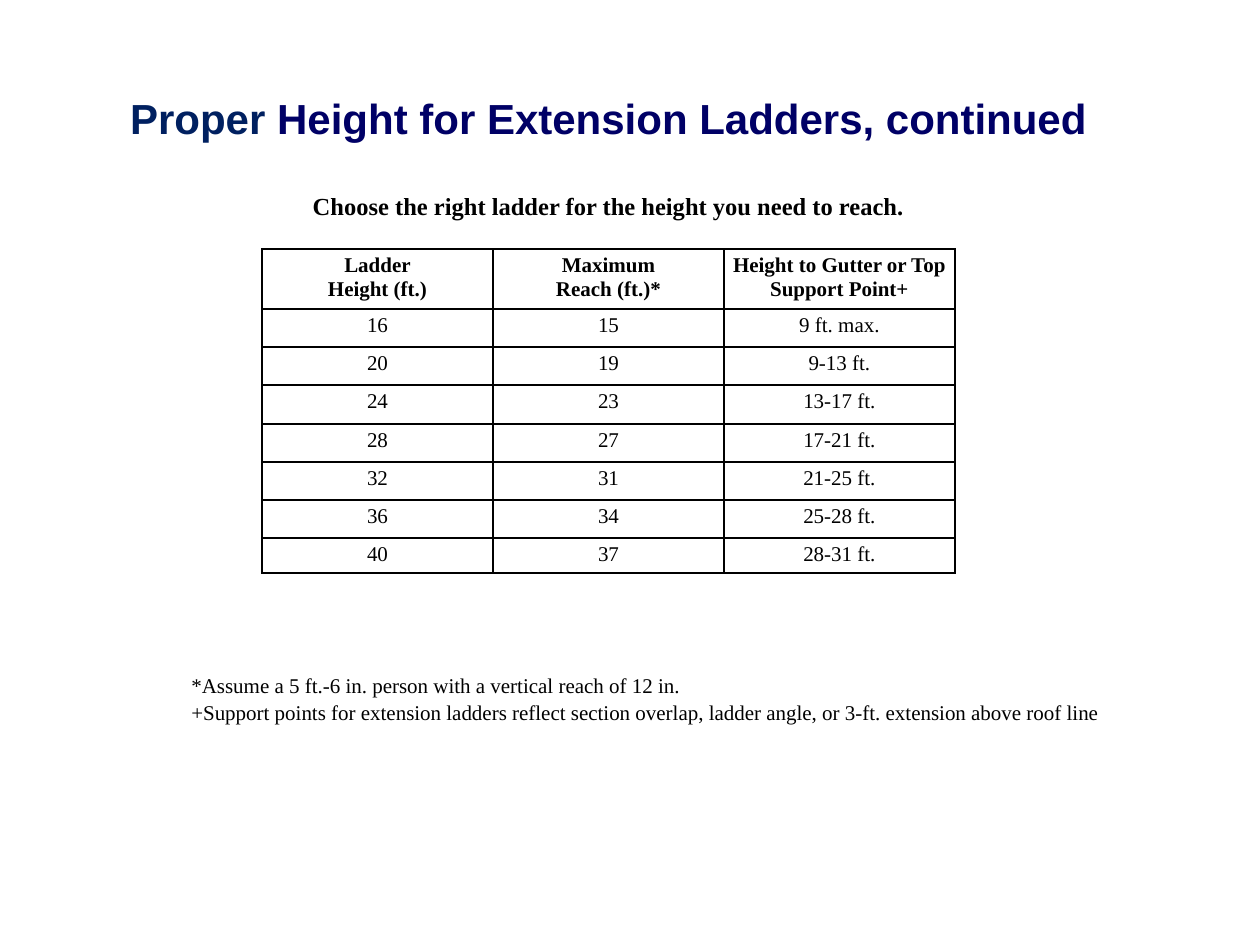
from lxml.etree import SubElement
from pptx import Presentation
from pptx.dml.color import RGBColor
from pptx.enum.text import MSO_ANCHOR, MSO_AUTO_SIZE, PP_ALIGN
from pptx.oxml.ns import qn
from pptx.util import Emu, Pt

PX_PER_INCH = 126
SERIF = "Times New Roman"
BLACK = "000000"

ROW_HEIGHTS = [60, 38, 38, 39, 38, 38, 38, 35]
COLUMN_WIDTH = 231
LADDERS = [
    ("Ladder\nHeight (ft.)", "Maximum\nReach (ft.)*",
     "Height to Gutter or Top Support Point+"),
    ("16", "15", "9 ft. max."),
    ("20", "19", "9-13 ft."),
    ("24", "23", "13-17 ft."),
    ("28", "27", "17-21 ft."),
    ("32", "31", "21-25 ft."),
    ("36", "34", "25-28 ft."),
    ("40", "37", "28-31 ft."),
]
NOTES = [
    "*Assume a 5 ft.-6 in. person with a vertical reach of 12 in.",
    "+Support points for extension ladders reflect section overlap, "
    "ladder angle, or 3-ft. extension above roof line",
]


def px(n):
    return Emu(round(n * 914400 / PX_PER_INCH))


def set_font(font, color, size, name=SERIF, bold=False):
    font.name, font.size, font.bold = name, Pt(size), bold
    font.color.rgb = RGBColor.from_string(color)


def place(sp, x, y, w, h):
    sp.left, sp.top, sp.width, sp.height = px(x), px(y), px(w), px(h)
    tf = sp.text_frame
    tf.word_wrap = True
    tf.auto_size = MSO_AUTO_SIZE.NONE
    return tf


def add_heading(sp, box, parts, size, name):
    """Fill a placeholder with one bold centred line of (text, colour) parts."""
    tf = place(sp, *box)
    tf.vertical_anchor = MSO_ANCHOR.MIDDLE
    p = tf.paragraphs[0]
    p.alignment, p.space_before = PP_ALIGN.CENTER, Pt(0)
    for text, color in parts:
        r = p.add_run()
        r.text = text
        set_font(r.font, color, size, name, bold=True)


def set_borders(cell):
    tc_pr = cell._tc.get_or_add_tcPr()
    for i, side in enumerate(("lnL", "lnR", "lnT", "lnB")):
        ln = tc_pr.makeelement(qn(f"a:{side}"), {"w": str(Pt(1))})
        fill = SubElement(ln, qn("a:solidFill"))
        SubElement(fill, qn("a:srgbClr"), val=BLACK)
        tc_pr.insert(i, ln)


def fill_cell(cell, text, bold):
    cell.text = text
    cell.fill.background()
    cell.margin_left = cell.margin_right = px(9)
    cell.margin_top = cell.margin_bottom = px(5)
    for p in cell.text_frame.paragraphs:
        p.alignment = PP_ALIGN.CENTER
        set_font(p.font, BLACK, 12, bold=bold)
    set_borders(cell)


def add_ladder_table(s, x, y):
    rows, cols = len(LADDERS), len(LADDERS[0])
    table = s.shapes.add_table(rows, cols, px(x), px(y), px(COLUMN_WIDTH * cols),
                               px(sum(ROW_HEIGHTS))).table
    table.first_row = table.horz_banding = False
    for column in table.columns:
        column.width = px(COLUMN_WIDTH)
    for i, (height, values) in enumerate(zip(ROW_HEIGHTS, LADDERS)):
        table.rows[i].height = px(height)
        for j, text in enumerate(values):
            fill_cell(table.cell(i, j), text, bold=i == 0)


def add_notes(s, x, y, w, h):
    tf = place(s.shapes.add_textbox(0, 0, 0, 0), x, y, w, h)
    tf.text = "\n".join(NOTES)
    for i, p in enumerate(tf.paragraphs):
        p.space_before = Pt(1 if i else 0)
        set_font(p.font, BLACK, 12)


def main():
    prs = Presentation()
    prs.slide_width, prs.slide_height = px(1260), px(945)
    s = prs.slides.add_slide(prs.slide_layouts[0])

    # Title and subtitle
    add_heading(s.shapes.title, (73, 81, 1071, 73),
                [("Proper", "002060"),
                 (" Height for Extension Ladders, continued", "000066")],
                24, "Arial")
    add_heading(s.placeholders[1], (73, 188, 1071, 36),
                [("Choose the right ladder for the height you need to reach.", BLACK)],
                14, SERIF)

    # Ladder heights and their footnotes
    add_ladder_table(s, 262, 249)
    add_notes(s, 179, 666, 935, 89)

    prs.save("out.pptx")


if __name__ == "__main__":
    main()
